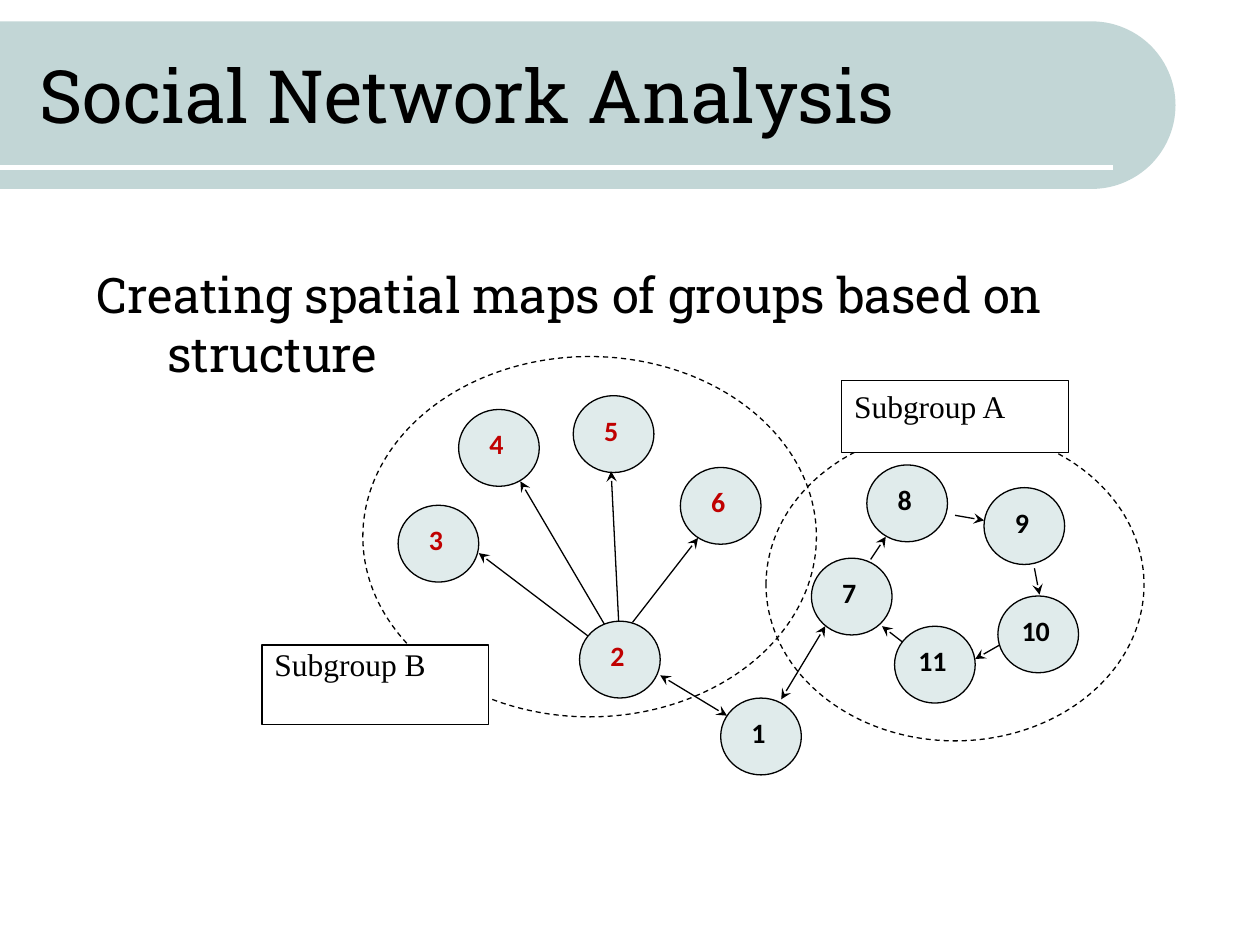
from math import cos, pi, sin

from lxml.etree import SubElement
from pptx import Presentation
from pptx.dml.color import RGBColor
from pptx.enum.dml import MSO_LINE_DASH_STYLE as DASH
from pptx.enum.shapes import MSO_CONNECTOR as CONN, MSO_SHAPE as SHAPE
from pptx.enum.text import MSO_ANCHOR as ANCHOR, PP_ALIGN as ALIGN
from pptx.oxml.ns import qn
from pptx.util import Inches, Pt

COLORS = {"band": "C2D6D6", "white": "FFFFFF", "black": "000000",
          "node": "E0EBEB", "red": "C00000"}
SLAB = "Roboto Slab"
NODE_W, NODE_H = 0.64, 0.61

# Number: (left, top), relative to the diagram box
NODES_B = {2: (2.52, 2.1), 3: (1.08, 1.18), 4: (1.56, 0.42),
           5: (2.47, 0.31), 6: (3.32, 0.88)}
NODES_A = {1: (3.64, 2.71), 7: (4.36, 1.6), 8: (4.8, 0.86),
           9: (5.73, 1.04), 10: (5.84, 1.9), 11: (5.02, 2.14)}
# x1, y1, x2, y2; the arrow points at the second end
ONE_WAY = [
    (2.72, 2.13, 2.05, 0.99), (2.94, 2.11, 3.46, 1.44),
    (2.83, 2.1, 2.77, 0.91), (2.59, 2.22, 1.72, 1.56),
    (5.14, 2.31, 4.92, 2.14), (4.83, 1.61, 4.95, 1.43),
    (5.5, 1.26, 5.73, 1.3), (5.87, 2.28, 5.66, 2.4),
    (6.13, 1.68, 6.17, 1.89),
]
TWO_WAY = [(4.12, 2.72, 4.47, 2.14), (3.69, 2.85, 3.16, 2.53)]


def rgb(name):
    return RGBColor.from_string(COLORS[name])


def write(sp, text, size, font, color="black", bold=False, align=ALIGN.LEFT,
          anchor=ANCHOR.TOP, insets=(0.1, 0.05, 0.1, 0.05), after=0, hanging=0):
    tf = sp.text_frame
    tf.word_wrap = True
    tf.vertical_anchor = anchor
    tf.margin_left, tf.margin_top, tf.margin_right, tf.margin_bottom = map(Inches, insets)
    p = tf.paragraphs[0]
    p.alignment = align
    p.space_before, p.space_after = Pt(0), Pt(after)
    if hanging:
        pPr = p._p.get_or_add_pPr()
        pPr.set("marL", str(Inches(hanging)))
        pPr.set("indent", str(-Inches(hanging)))
    r = p.add_run()
    r.text = text
    r.font.size, r.font.name, r.font.bold = Pt(size), font, bold
    r.font.color.rgb = rgb(color)


def add_shape(s, kind, x, y, w, h, fill=None, dash=None):
    sp = s.shapes.add_shape(kind, *map(Inches, (x, y, w, h)))
    sp.shadow.inherit = False
    if fill:
        sp.fill.solid()
        sp.fill.fore_color.rgb = rgb(fill)
    else:
        sp.fill.background()
    sp.line.color.rgb = rgb("black")
    sp.line.width = Pt(0.75)
    if dash:
        sp.line.dash_style = dash
    return sp


def add_line(s, x1, y1, x2, y2, color="black", width=0.75, arrows=()):
    """Draw a line; arrows names its headEnd and/or tailEnd."""
    line = s.shapes.add_connector(CONN.STRAIGHT, *map(Inches, (x1, y1, x2, y2)))
    line.line.color.rgb = rgb(color)
    line.line.width = Pt(width)
    ln = line.line._get_or_add_ln()
    for end in arrows:
        SubElement(ln, qn("a:" + end), type="stealth")
    SubElement(line._element.spPr, qn("a:effectLst"))


def title_band(s, x, y, w, h):
    """Band with a half-round right end, a white rule and the title."""
    radius = h / 2
    cx, cy = x + w - radius, y + radius
    angles = [pi * i / 60 - pi / 2 for i in range(61)]
    arc = [(Inches(cx + radius * cos(a)), Inches(cy + radius * sin(a))) for a in angles]
    builder = s.shapes.build_freeform(Inches(x), Inches(y))
    builder.add_line_segments(arc + [(Inches(x), Inches(y + h))], close=True)
    band = builder.convert_to_shape()
    band.shadow.inherit = False
    band.fill.solid()
    band.fill.fore_color.rgb = rgb("band")
    band.line.fill.background()
    add_line(s, x, y + 1.16, x + w - 0.5, y + 1.16, "white", 3)

    title = s.shapes.title
    s.shapes._spTree.append(title._element)  # bring in front of the band
    title.left, title.top, title.width, title.height = map(
        Inches, (x + 0.21, y + 0.08, 8.77, 1))
    write(title, "Social Network Analysis", 42, SLAB, anchor=ANCHOR.MIDDLE)


def body_text(s, x, y, w, h):
    sp = s.shapes.add_textbox(*map(Inches, (x, y, w, h)))
    write(sp, "Creating spatial maps of groups based on structure", 28, SLAB, hanging=0.56)


def subgroup(s, ellipse, label, text, insets):
    add_shape(s, SHAPE.OVAL, *ellipse, dash=DASH.DASH)
    sp = add_shape(s, SHAPE.RECTANGLE, *label, fill="white")
    write(sp, text, 18, "Times New Roman", insets=insets, after=10)


def network(s, x, y):
    """Arrows, numbered nodes and subgroups, from the box's top left corner."""
    for edges, arrows in ((TWO_WAY, ("headEnd", "tailEnd")), (ONE_WAY, ("tailEnd",))):
        for x1, y1, x2, y2 in edges:
            add_line(s, x + x1, y + y1, x + x2, y + y2, arrows=arrows)
    for nodes, color in ((NODES_B, "red"), (NODES_A, "black")):
        for number, (dx, dy) in nodes.items():
            sp = add_shape(s, SHAPE.OVAL, x + dx, y + dy, NODE_W, NODE_H, "node")
            write(sp, str(number), 16, "Calibri", color, bold=True, align=ALIGN.CENTER,
                  insets=(0.06, 0.05, 0.1, 0.05), after=10)
    subgroup(s, (x + 4, y + 0.57, 3, 2.48), (x + 4.6, y + 0.19, 1.8, 0.57),
             "Subgroup A", (0.1, 0.05, 0.1, 0.05))
    subgroup(s, (x + 0.8, y, 3.6, 2.86), (x, y + 2.29, 1.8, 0.63),
             "Subgroup B", (0.1, 0, 0, 0))


def main():
    prs = Presentation()
    prs.slide_width, prs.slide_height = Inches(10), Inches(7.5)
    s = prs.slides.add_slide(prs.slide_layouts[5])
    title_band(s, 0, 0.17, 9.33, 1.33)
    body_text(s, 0.67, 2.05, 8.42, 1.05)
    network(s, 2.08, 2.83)
    prs.save("out.pptx")


if __name__ == "__main__":
    main()
